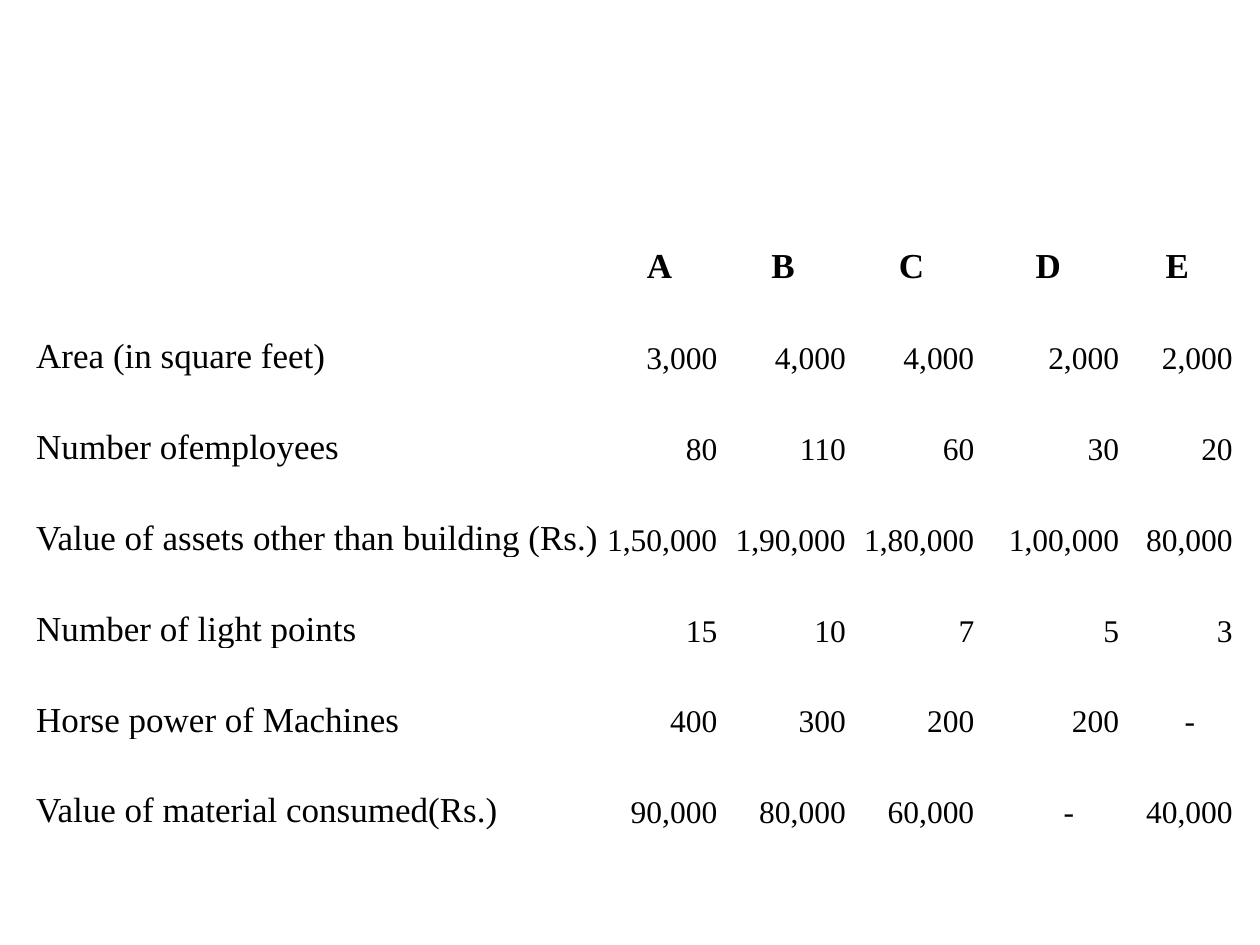
from pptx import Presentation
from pptx.dml.color import RGBColor
from pptx.enum.text import MSO_ANCHOR, PP_ALIGN
from pptx.util import Cm, Pt

COLUMN_WIDTHS = [11.4, 2.39, 2.59, 2.59, 2.92, 2.29]
ROW_HEIGHT = 1.83
DASH_INDENTS = {4: 1.77, 5: 1.29}
ROWS = [
    ["", "A", "B", "C", "D", "E"],
    ["Area (in square feet)", "3,000", "4,000", "4,000", "2,000", "2,000"],
    ["Number ofemployees", "80", "110", "60", "30", "20"],
    ["Value of assets other than building (Rs.)",
     "1,50,000", "1,90,000", "1,80,000", "1,00,000", "80,000"],
    ["Number of light points", "15", "10", "7", "5", "3"],
    ["Horse power of Machines", "400", "300", "200", "200", "-"],
    ["Value of material consumed(Rs.)", "90,000", "80,000", "60,000", "-", "40,000"],
]


def color(value):
    """Turn a hex string into a colour."""
    return RGBColor.from_string(value)


def fill_cell(cell, text, size, align, bold=False, indent=0.03):
    """Write bottom-anchored text in a plain cell."""
    cell.fill.solid()
    cell.fill.fore_color.rgb = color("FFFFFF")
    cell.vertical_anchor = MSO_ANCHOR.BOTTOM
    cell.margin_left = Cm(indent)
    cell.margin_right = cell.margin_top = Cm(0.03)
    cell.margin_bottom = 0
    cell.text = text
    para = cell.text_frame.paragraphs[0]
    para.alignment = align
    para.font.name = "Times New Roman"
    para.font.size = Pt(size)
    para.font.bold = bold
    para.font.color.rgb = color("000000")


def add_department_table(page, left, top):
    """Place the table of department figures."""
    table = page.shapes.add_table(
        len(ROWS), len(COLUMN_WIDTHS), Cm(left), Cm(top),
        Cm(sum(COLUMN_WIDTHS)), Cm(ROW_HEIGHT * len(ROWS))).table
    table.first_row = table.horz_banding = False
    for column, width in zip(table.columns, COLUMN_WIDTHS):
        column.width = Cm(width)
    for row_index, values in enumerate(ROWS):
        table.rows[row_index].height = Cm(ROW_HEIGHT)
        for column_index, text in enumerate(values):
            cell = table.cell(row_index, column_index)
            if row_index == 0:
                fill_cell(cell, text, 20, PP_ALIGN.CENTER, bold=True)
            elif column_index == 0:
                fill_cell(cell, text, 20, PP_ALIGN.LEFT)
            elif text == "-":
                fill_cell(cell, text, 18, PP_ALIGN.LEFT,
                          indent=DASH_INDENTS[column_index])
            else:
                fill_cell(cell, text, 18, PP_ALIGN.RIGHT)


def main():
    """Build and save the deck."""
    deck = Presentation()
    deck.slide_width, deck.slide_height = Cm(25.4), Cm(19.05)
    page = deck.slides.add_slide(deck.slide_layouts[6])
    add_department_table(page, 0.7, 3.93)
    deck.save("out.pptx")


if __name__ == "__main__":
    main()
